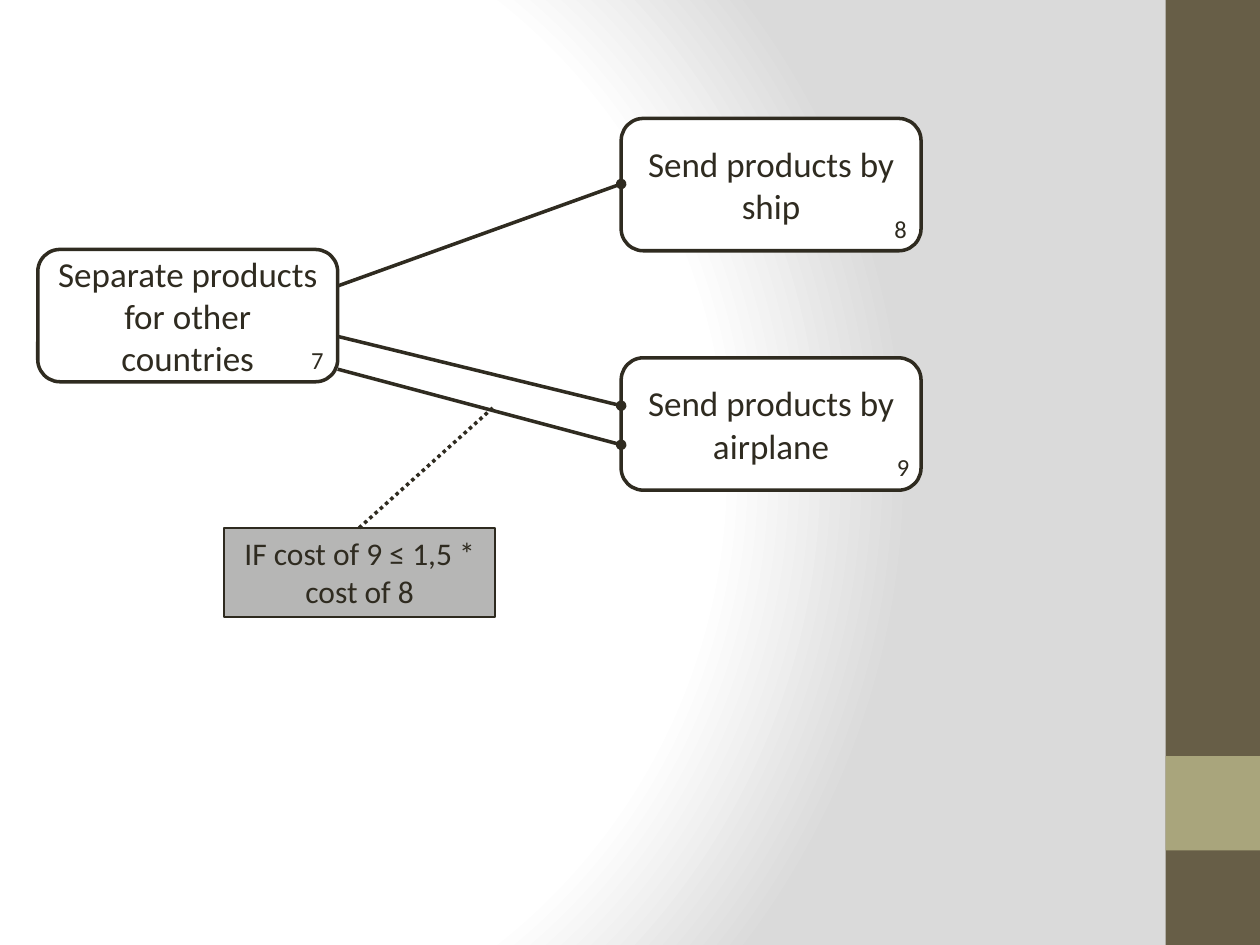
from dataclasses import dataclass

from pptx import Presentation
from pptx import util as u
from pptx.dml.color import RGBColor
from pptx.enum import dml, shapes, text
from pptx.oxml import parse_xml
from pptx.oxml.ns import nsdecls, qn
from pptx.shapes.base import BaseShape
from pptx.slide import Slide

INK = RGBColor(0x2F, 0x2B, 0x20)
NOTE_LINE = RGBColor(0x2E, 0x2A, 0x1F)
NOTE_FILL = RGBColor(0xB6, 0xB6, 0xB5)
WHITE = RGBColor(0xFF, 0xFF, 0xFF)
BROWN = RGBColor(0x67, 0x5E, 0x47)
OLIVE = RGBColor(0xA9, 0xA5, 0x7C)
SILVER = RGBColor(0xDA, 0xDA, 0xDA)
FONT = "Calibri"
STEP_WIDTH, STEP_HEIGHT = 2.38, 1.05
STEP_LEFT, BRANCH_LEFT = 0.3, 4.93
STEP_RIGHT = STEP_LEFT + STEP_WIDTH


@dataclass
class Step:
    label: str
    left: float
    top: float
    number: str
    number_left: float
    number_top: float


@dataclass
class Link:
    start: tuple[float, float]
    end: tuple[float, float]
    dotted: bool = False


STEPS = [
    Step("Separate products for other countries", STEP_LEFT, 1.98, "7", 2.37, 2.69),
    Step("Send products by ship", BRANCH_LEFT, 0.94, "8", 7, 1.65),
    Step("Send products by airplane", BRANCH_LEFT, 2.84, "9", 7.02, 3.54),
]
LINKS = [
    Link((STEP_RIGHT, 2.27), (BRANCH_LEFT, 1.46)),
    Link((STEP_RIGHT, 2.67), (BRANCH_LEFT, 3.22)),
    Link((STEP_RIGHT, 2.93), (BRANCH_LEFT, 3.53)),
]
CONDITION_LINK = Link((2.85, 4.19), (3.93, 3.22), dotted=True)


def paint_background(page: Slide) -> None:
    page.background.fill.gradient()
    gradient = page.element.find(".//" + qn("a:gradFill"))
    stops = "".join(
        f'<a:gs pos="{percent * 1000}"><a:srgbClr val="{color}"/></a:gs>'
        for percent, color in ((0, WHITE), (75, WHITE), (100, SILVER))
    )
    gradient.getparent().replace(gradient, parse_xml(
        f'<a:gradFill {nsdecls("a")} rotWithShape="1"><a:gsLst>{stops}</a:gsLst>'
        '<a:path path="circle">'
        '<a:fillToRect l="20000" t="50000" r="100000" b="50000"/>'
        '</a:path></a:gradFill>'
    ))


def write(box: BaseShape, label: str, size: int, align: text.PP_ALIGN) -> None:
    frame = box.text_frame
    frame.word_wrap = True
    frame.text = label
    para = frame.paragraphs[0]
    para.alignment = align
    for span in para.runs:
        span.font.name = FONT
        span.font.size = u.Pt(size)
        span.font.color.rgb = INK


def add_box(page: Slide, kind: shapes.MSO_SHAPE, left: float, top: float,
            width: float, height: float, fill: RGBColor,
            line: RGBColor | None = None, weight: float = 1) -> BaseShape:
    box = page.shapes.add_shape(
        kind, u.Inches(left), u.Inches(top), u.Inches(width), u.Inches(height))
    box.shadow.inherit = False
    box.fill.solid()
    box.fill.fore_color.rgb = fill
    if line is None:
        box.line.fill.background()
    else:
        box.line.color.rgb = line
        box.line.width = u.Pt(weight)
    return box


def add_step(page: Slide, step: Step) -> None:
    box = add_box(page, shapes.MSO_SHAPE.ROUNDED_RECTANGLE, step.left, step.top,
                  STEP_WIDTH, STEP_HEIGHT, WHITE, INK, 2)
    box.text_frame.vertical_anchor = text.MSO_ANCHOR.MIDDLE
    write(box, step.label, 20, text.PP_ALIGN.CENTER)


def add_number(page: Slide, step: Step) -> None:
    box = page.shapes.add_textbox(u.Inches(step.number_left), u.Inches(step.number_top),
                                  u.Inches(0.48), u.Inches(0.34))
    write(box, step.number, 14, text.PP_ALIGN.LEFT)
    box.text_frame.auto_size = text.MSO_AUTO_SIZE.SHAPE_TO_FIT_TEXT


def add_link(page: Slide, link: Link) -> None:
    connector = page.shapes.add_connector(
        shapes.MSO_CONNECTOR.STRAIGHT,
        *(u.Inches(value) for value in link.start + link.end))
    connector.line.color.rgb = INK
    connector.line.width = u.Pt(2)
    if link.dotted:
        connector.line.dash_style = dml.MSO_LINE.ROUND_DOT
        connector.line.dash_style = dml.MSO_LINE.ROUND_DOT
    else:
        connector.line._get_or_add_ln().append(
            parse_xml(f'<a:tailEnd {nsdecls("a")} type="oval"/>'))
    connector.element.spPr.append(parse_xml(f'<a:effectLst {nsdecls("a")}/>'))


def add_condition(page: Slide) -> None:
    box = add_box(page, shapes.MSO_SHAPE.RECTANGLE, 1.78, 4.19, 2.15, 0.71,
                  NOTE_FILL, NOTE_LINE)
    box.text_frame.vertical_anchor = text.MSO_ANCHOR.TOP
    write(box, "IF cost of 9 ≤ 1,5 * cost of 8", 18, text.PP_ALIGN.CENTER)
    box.text_frame.auto_size = text.MSO_AUTO_SIZE.SHAPE_TO_FIT_TEXT


def main() -> None:
    deck = Presentation()
    deck.slide_width, deck.slide_height = u.Inches(10), u.Inches(7.5)
    page = deck.slides.add_slide(deck.slide_layouts[6])
    paint_background(page)
    add_box(page, shapes.MSO_SHAPE.RECTANGLE, 9.25, 0, 0.75, 7.5, BROWN)
    add_box(page, shapes.MSO_SHAPE.RECTANGLE, 9.25, 6, 0.75, 0.75, OLIVE)
    for step in STEPS:
        add_step(page, step)
    for link in LINKS:
        add_link(page, link)
    for step in STEPS:
        add_number(page, step)
    add_condition(page)
    add_link(page, CONDITION_LINK)
    deck.save("out.pptx")


if __name__ == "__main__":
    main()
